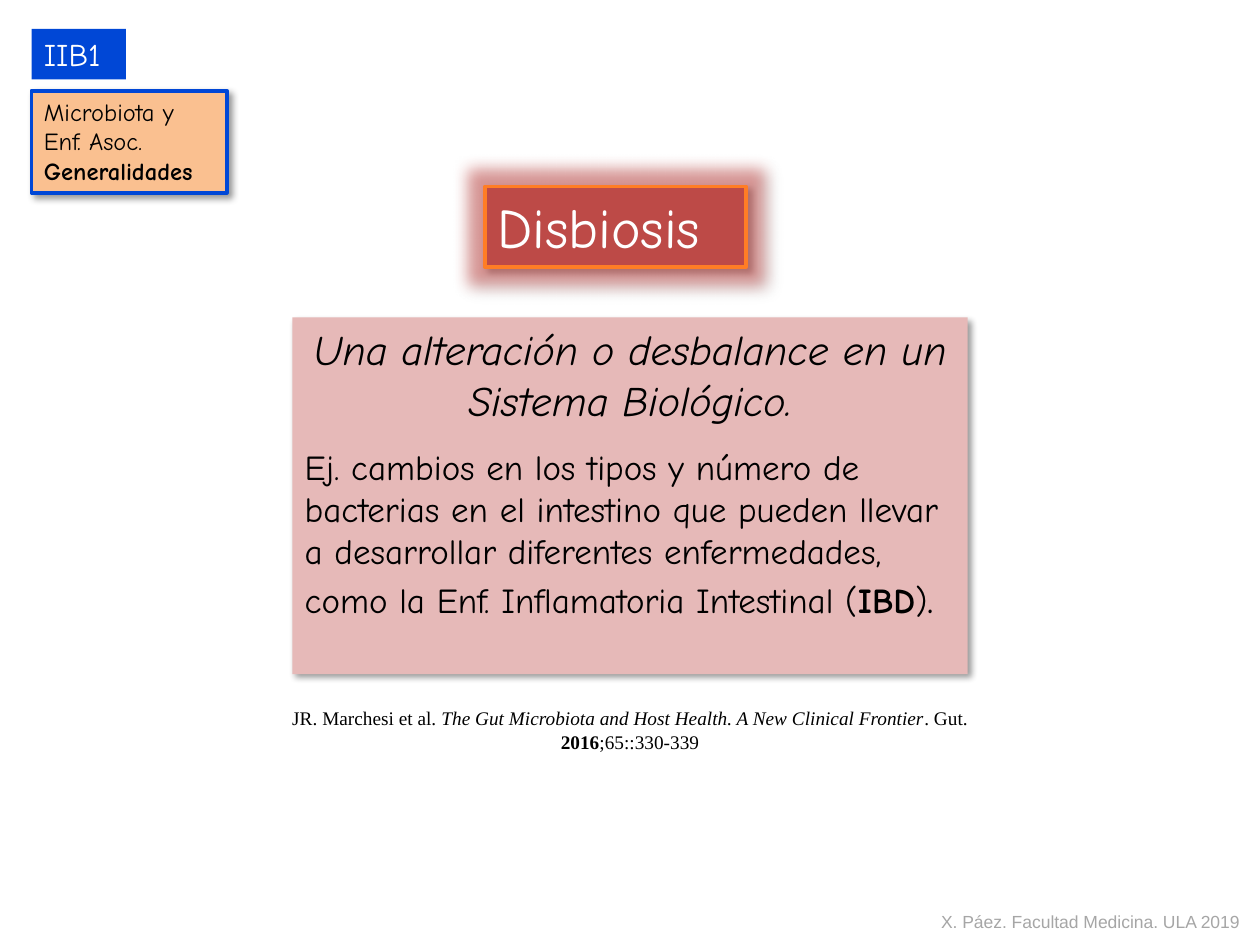
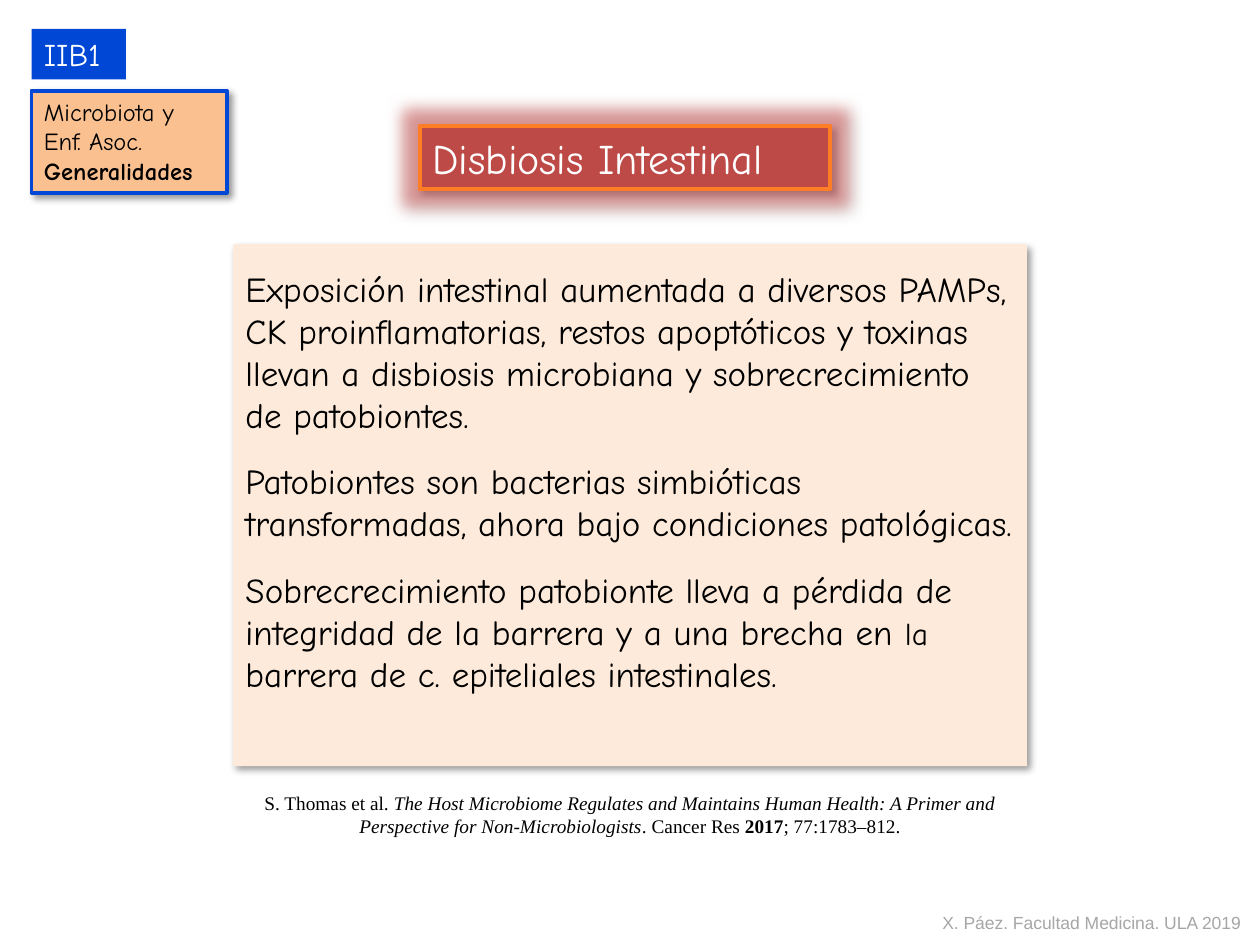
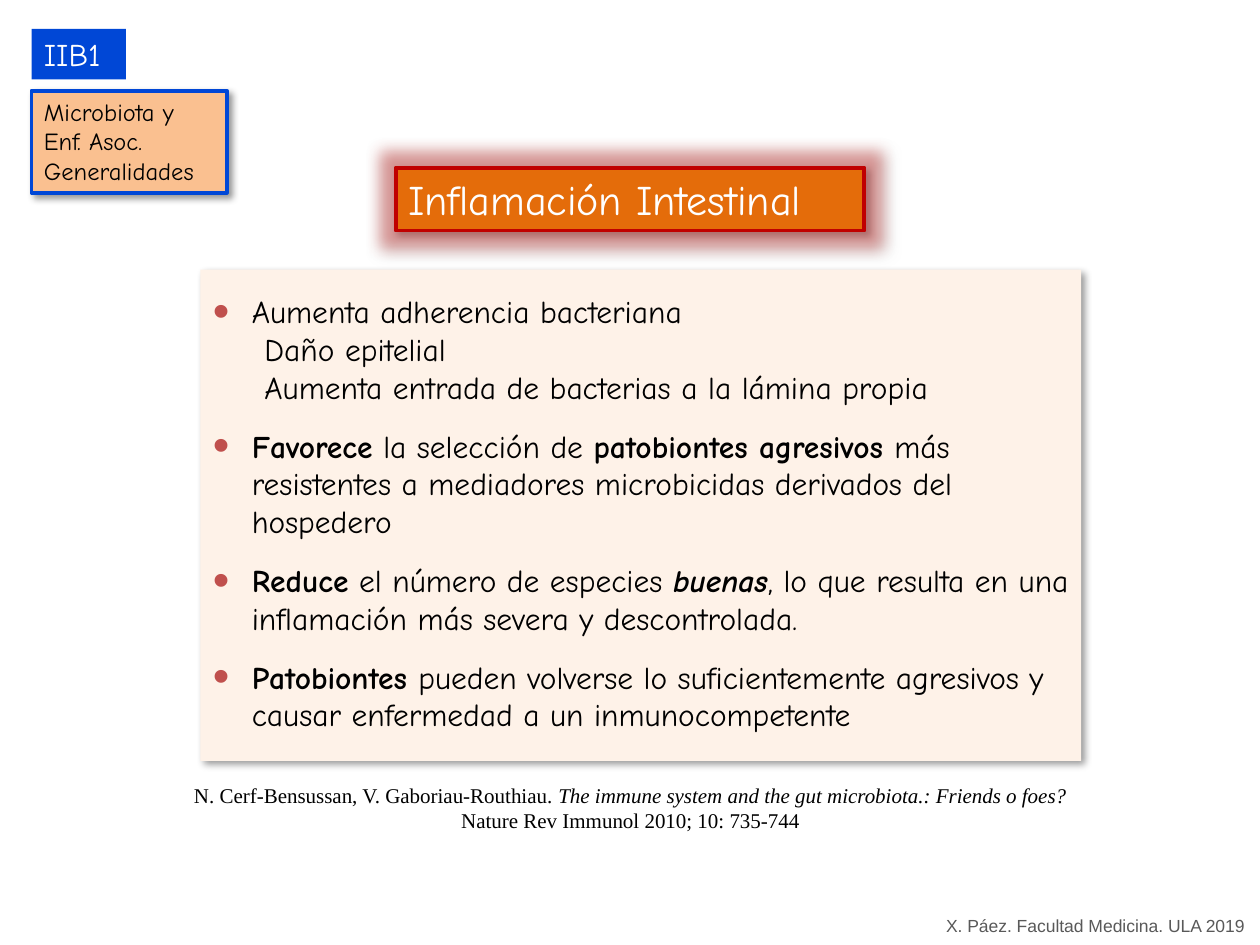
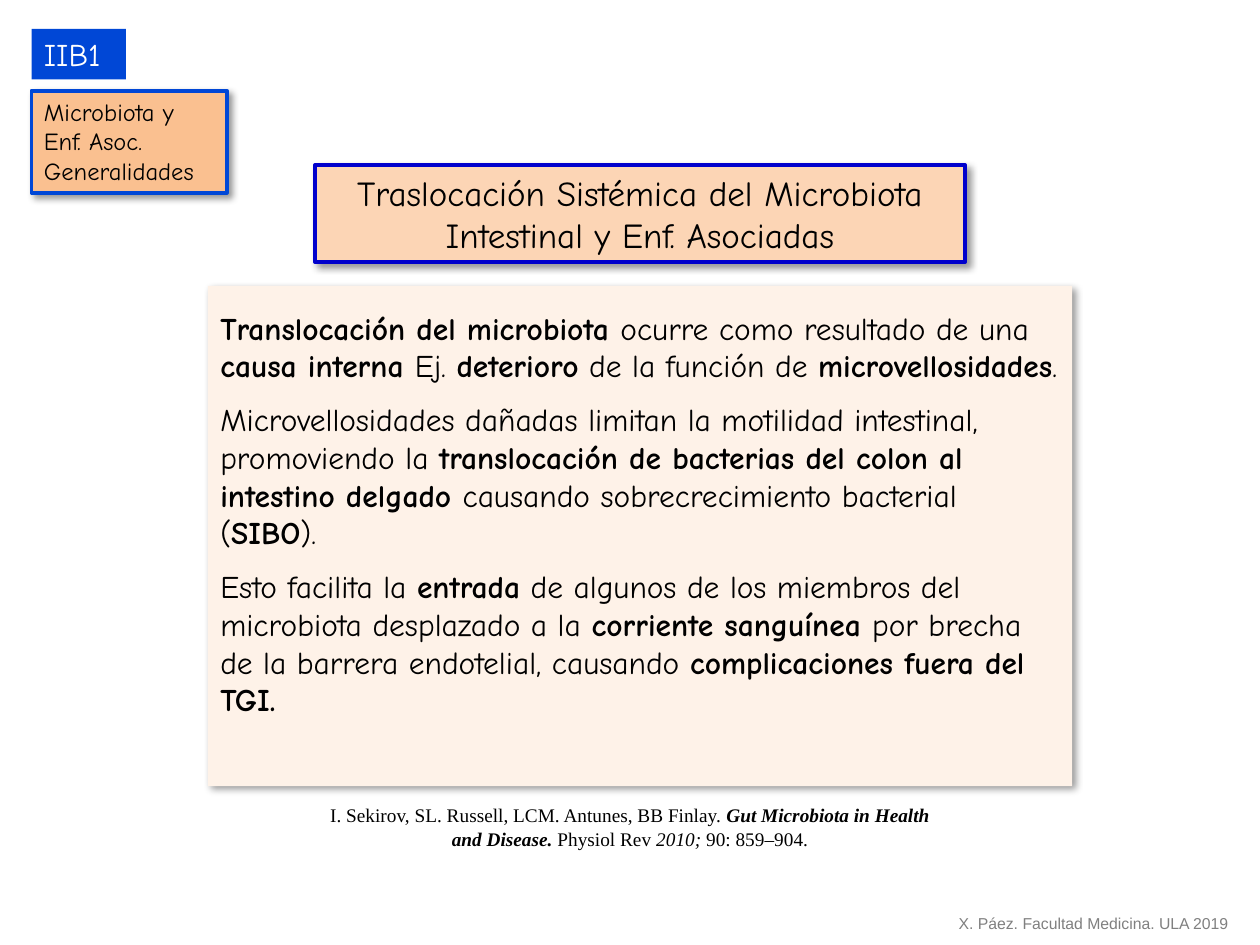
import dataclasses

import lxml.etree
import pptx
import pptx.dml.color
import pptx.enum.shapes
import pptx.enum.text
import pptx.oxml.ns
import pptx.util

Inches = pptx.util.Inches
Pt = pptx.util.Pt
ALIGN = pptx.enum.text.PP_ALIGN
qn = pptx.oxml.ns.qn


# Theme: every colour, font and type size
@dataclasses.dataclass(frozen=True)
class Theme:
    hand: str = "Comic Neue"
    serif: str = "Times New Roman"
    sans: str = "Arial"
    black: str = "000000"
    white: str = "FFFFFF"
    blue: str = "0047D6"
    navy: str = "0000CC"
    peach: str = "FAC090"
    light_peach: str = "FCD5B5"
    brick: str = "BD4A47"
    bright_orange: str = "FF7D25"
    orange: str = "E46C0A"
    crimson: str = "C00000"
    glow: str = "D0302D"
    bullet: str = "C0504D"
    pink: str = "E6B9B8"
    cream: str = "FDEADA"
    pale_cream: str = "FEF2E8"
    silver: str = "A6A6A6"
    grey: str = "808080"
    dark_grey: str = "595959"
    display: int = 32
    heading: int = 24
    large: int = 20
    body: int = 18
    tag: int = 14
    note: int = 12
    citation: int = 11
    credit: int = 10
    small_credit: int = 9


THEME = Theme()


# Text helpers
def rgb(value):
    return pptx.dml.color.RGBColor.from_string(value)


def span(text, **style):
    return text, style


def bold(text):
    return span(text, bold=True)


def italic(text):
    return span(text, italic=True)


def line(*parts, **layout):
    """A paragraph: its parts and its own layout or type size."""
    return parts, layout


def add_span(para, text, size=THEME.body, font=THEME.hand, color=THEME.black,
             bold=False, italic=False):
    run = para.add_run()
    run.text = text
    run.font.name = font
    run.font.size = Pt(size)
    run.font.bold = bold
    run.font.italic = italic
    run.font.color.rgb = rgb(color)


def add_bullet(para, indent):
    props = para._p.get_or_add_pPr()
    props.set("marL", str(Inches(indent)))
    props.set("indent", str(-Inches(indent)))
    color = lxml.etree.SubElement(props, qn("a:buClr"))
    lxml.etree.SubElement(color, qn("a:srgbClr"), val=THEME.bullet)
    lxml.etree.SubElement(props, qn("a:buSzPct"), val="150000")
    lxml.etree.SubElement(props, qn("a:buFont"), typeface=THEME.sans)
    lxml.etree.SubElement(props, qn("a:buChar"), char="•")


def write(box, lines, align=ALIGN.LEFT, wrap=True, top=0.05, **style):
    frame = box.text_frame
    frame.word_wrap = wrap
    frame.auto_size = pptx.enum.text.MSO_AUTO_SIZE.NONE
    frame.vertical_anchor = pptx.enum.text.MSO_ANCHOR.TOP
    frame.margin_left = frame.margin_right = Inches(0.1)
    frame.margin_top, frame.margin_bottom = Inches(top), Inches(0.05)
    for index, (parts, layout) in enumerate(lines):
        para = frame.paragraphs[0] if index == 0 else frame.add_paragraph()
        local = dict(layout)
        para.alignment = local.pop("align", align)
        gap = local.pop("gap", 0)
        if index and gap:
            para.space_before = Pt(gap)
        if "bullet" in local:
            add_bullet(para, local.pop("bullet"))
        if "left" in local:
            para._p.get_or_add_pPr().set("marL", str(Inches(local.pop("left"))))
        for part in parts:
            text, own = span(part) if isinstance(part, str) else part
            add_span(para, text, **{**style, **local, **own})


class LectureDeck:
    """Holds the theme, the presentation and the current page."""

    def __init__(self, theme):
        self.theme = theme
        self.deck = pptx.Presentation()
        self.deck.slide_width = Inches(10)
        self.deck.slide_height = Inches(7.5)
        self.page = None

    def new_page(self):
        self.page = self.deck.slides.add_slide(self.deck.slide_layouts[5])

    def paint(self, box, fill, outline=None, shadow=True, glow=False):
        box.fill.solid()
        box.fill.fore_color.rgb = rgb(fill)
        if outline:
            box.line.color.rgb = rgb(outline)
            box.line.width = Pt(2.25)
        else:
            box.line.fill.background()
        box.shadow.inherit = False
        effects = box._element.spPr.find(qn("a:effectLst"))
        if glow:
            self.effect(effects, "a:glow", self.theme.glow, rad=Pt(18))
        if shadow:
            self.effect(effects, "a:outerShdw", self.theme.black, blurRad=Pt(4),
                        dist=Pt(3), dir=45 * 60000, algn="tl", rotWithShape=0)

    def effect(self, effects, tag, color, **settings):
        settings = {key: str(value) for key, value in settings.items()}
        node = lxml.etree.SubElement(effects, qn(tag), **settings)
        shade = lxml.etree.SubElement(node, qn("a:srgbClr"), val=color)
        lxml.etree.SubElement(shade, qn("a:alpha"), val="40000")

    def title(self, text, place, fill, outline, size, glow=True, **style):
        box = self.page.shapes.title
        box.left, box.top, box.width, box.height = map(Inches, place)
        self.paint(box, fill, outline, glow=glow)
        write(box, [line(text)], size=size, **style)

    def panel(self, place, fill, lines, outline=None, shadow=True, **style):
        box = self.page.shapes.add_shape(
            pptx.enum.shapes.MSO_SHAPE.RECTANGLE, *map(Inches, place))
        self.paint(box, fill, outline, shadow)
        write(box, lines, **style)

    def label(self, place, parts, **style):
        box = self.page.shapes.add_textbox(*map(Inches, place))
        write(box, [line(*parts)], **style)

    def citation(self, place, *parts, size=THEME.citation):
        self.label(place, parts, size=size, font=self.theme.serif,
                   align=ALIGN.CENTER)

    def credit(self, place, color, size=THEME.credit):
        self.label(place, ["X. Páez. Facultad Medicina. ULA 2019"], size=size,
                   font=self.theme.sans, color=color, wrap=False)

    def unit_tags(self, strong):
        theme = self.theme
        self.panel((0.25, 0.72, 1.55, 0.81), theme.peach,
                   [line("Microbiota y"), line("Enf. Asoc."),
                    line("Generalidades", bold=strong)],
                   outline=theme.blue, size=theme.tag)
        self.panel((0.25, 0.23, 0.75, 0.4), theme.blue, [line("IIB1")],
                   shadow=False, size=theme.body, color=theme.white)


def dysbiosis(show):
    theme = show.theme
    show.new_page()
    show.title("Disbiosis", (3.85, 1.48, 2.07, 0.64), theme.brick,
               theme.bright_orange, theme.display, color=theme.white)
    show.panel((2.32, 2.52, 5.36, 2.83), theme.pink, [
        line("Una alteración o desbalance en un Sistema Biológico.",
             align=ALIGN.CENTER, size=theme.heading, italic=True),
        line("Ej. cambios en los tipos y número de bacterias en el intestino que "
             "pueden llevar a desarrollar diferentes enfermedades, como la Enf. "
             "Inflamatoria Intestinal (", bold("IBD"), ")",
             span(".", size=theme.heading), gap=12),
    ], size=theme.large)
    show.citation((2.14, 5.56, 5.72, 0.47), "JR. Marchesi et al. ",
                  italic("The Gut Microbiota and Host Health. A New Clinical Frontier"),
                  ". Gut. ", bold("2016"), ";65::330-339")
    show.credit((7.37, 7.18, 2.59, 0.27), theme.silver)
    show.unit_tags(strong=True)


def gut_dysbiosis(show):
    theme = show.theme
    show.new_page()
    show.title("Disbiosis Intestinal", (3.33, 1, 3.26, 0.5), theme.brick,
               theme.bright_orange, theme.heading, color=theme.white)
    show.panel((1.85, 1.94, 6.3, 4.14), theme.cream, [
        line("Exposición intestinal aumentada a diversos PAMPs, CK "
             "proinflamatorias, restos apoptóticos y toxinas llevan a disbiosis "
             "microbiana y sobrecrecimiento de patobiontes."),
        line("Patobiontes son bacterias simbióticas transformadas, ahora bajo "
             "condiciones patológicas.", gap=14),
        line("Sobrecrecimiento patobionte lleva a pérdida de integridad de la "
             "barrera y a una brecha en ", span("la ", size=theme.body),
             "barrera de c. epiteliales intestinales.", gap=14),
    ], size=theme.large, top=0.18)
    show.citation((1.77, 6.23, 6.46, 0.47), "S. Thomas et al. ",
                  italic("The Host Microbiome Regulates and Maintains Human Health: "
                         "A Primer and Perspective for Non-Microbiologists"),
                  ". Cancer Res ", bold("2017"), "; 77:1783–812.")
    show.credit((7.38, 7.19, 2.59, 0.27), theme.silver)
    show.unit_tags(strong=True)


def gut_inflammation(show):
    theme = show.theme
    point = {"bullet": 0.31, "gap": 12}
    show.new_page()
    show.title("Inflamación Intestinal", (3.14, 1.33, 3.72, 0.5), theme.orange,
               theme.crimson, theme.heading, color=theme.white)
    show.panel((1.59, 2.14, 6.99, 3.9), theme.pale_cream, [
        line("Aumenta adherencia bacteriana", **point),
        line("Daño epitelial", left=0.41),
        line("Aumenta entrada de bacterias a la lámina propia", left=0.41),
        line(bold("Favorece"), " la selección de ", bold("patobiontes agresivos "),
             "más resistentes a mediadores microbicidas derivados del hospedero",
             **point),
        line(bold("Reduce"), " el número de especies ",
             span("buenas", bold=True, italic=True),
             ", lo que resulta en una inflamación más severa y descontrolada.",
             **point),
        line(bold("Patobiontes "), "pueden volverse lo suficientemente agresivos y "
             "causar enfermedad a un inmunocompetente", **point),
    ], size=theme.body, top=0.18)
    show.citation((1.38, 6.16, 7.25, 0.5),
                  "N. Cerf-Bensussan, V. Gaboriau-Routhiau. ",
                  italic("The immune system and the gut microbiota.: Friends o foes? "),
                  "Nature Rev Immunol 2010; 10: 735-744", size=theme.note)
    show.credit((7.41, 7.21, 2.59, 0.27), theme.dark_grey)
    show.unit_tags(strong=False)


def translocation(show):
    theme = show.theme
    show.new_page()
    show.title("Traslocación Sistémica del Microbiota Intestinal y Enf. Asociadas",
               (2.5, 1.31, 5.16, 0.77), theme.light_peach, theme.navy, theme.large,
               glow=False, align=ALIGN.CENTER)
    show.panel((1.65, 2.27, 6.86, 3.97), theme.pale_cream, [
        line(bold("Translocación del microbiota "), "ocurre como resultado de una ",
             bold("causa interna "), "Ej. ", bold("deterioro"), " de la función de ",
             bold("microvellosidades"), "."),
        line("Microvellosidades dañadas limitan la motilidad intestinal, "
             "promoviendo la ",
             bold("translocación de bacterias del colon al intestino delgado "),
             "causando sobrecrecimiento bacterial (", bold("SIBO"), ").", gap=9),
        line("Esto facilita la ", bold("entrada"),
             " de algunos de los miembros del microbiota desplazado a la ",
             bold("corriente sanguínea "),
             "por brecha de la barrera endotelial, causando ",
             bold("complicaciones fuera del TGI."), gap=9),
    ], size=theme.body, top=0.18)
    show.citation((2.5, 6.33, 5, 0.47),
                  "I. Sekirov, SL. Russell, LCM. Antunes, BB Finlay. ",
                  span("Gut Microbiota in Health and Disease. ", bold=True, italic=True),
                  "Physiol Rev ", italic("2010; "), "90: 859–904.")
    show.credit((7.51, 7.2, 2.37, 0.25), theme.grey, theme.small_credit)
    show.unit_tags(strong=False)


def main():
    show = LectureDeck(THEME)
    for build in (dysbiosis, gut_dysbiosis, gut_inflammation, translocation):
        build(show)
    show.deck.save("out.pptx")


if __name__ == "__main__":
    main()
